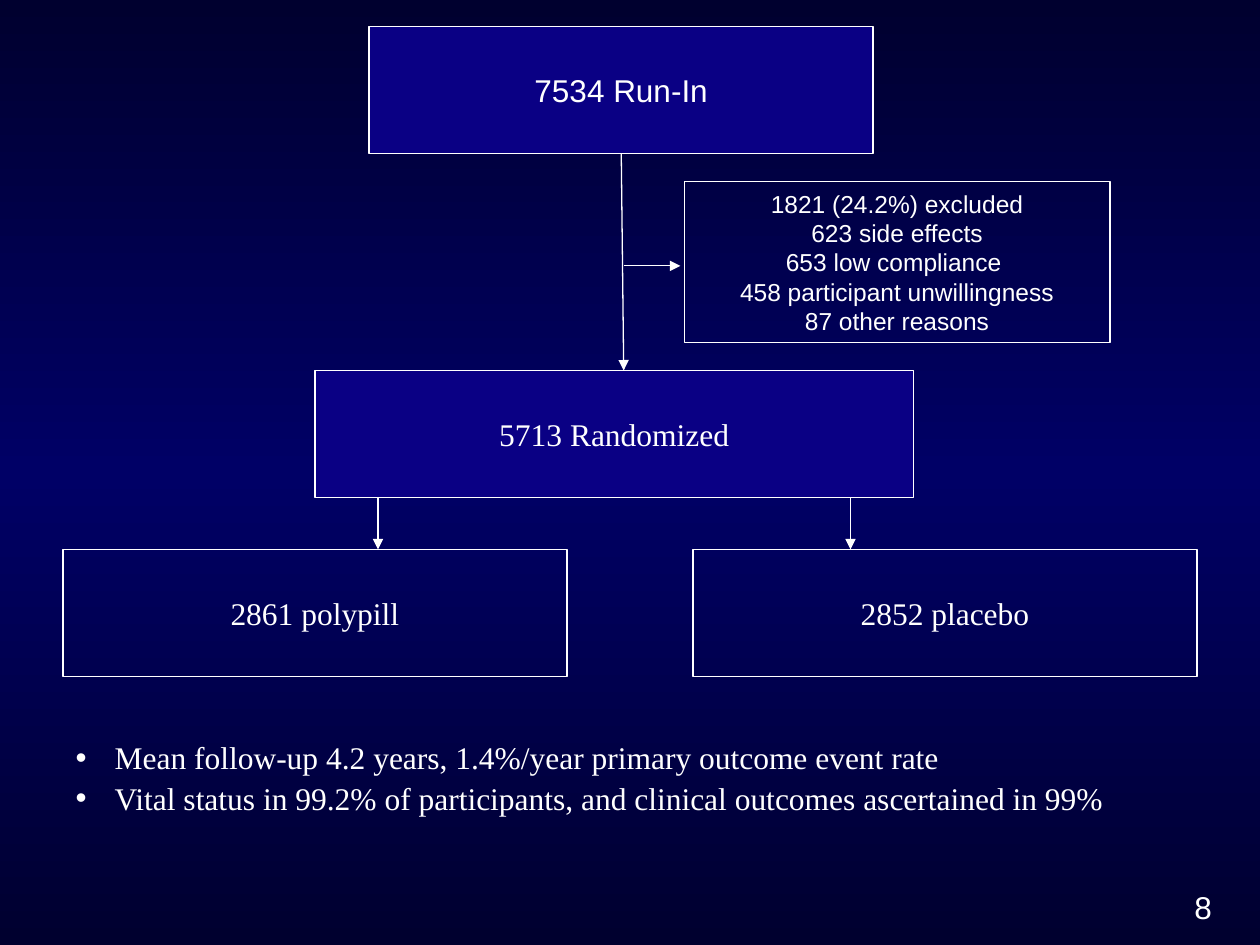
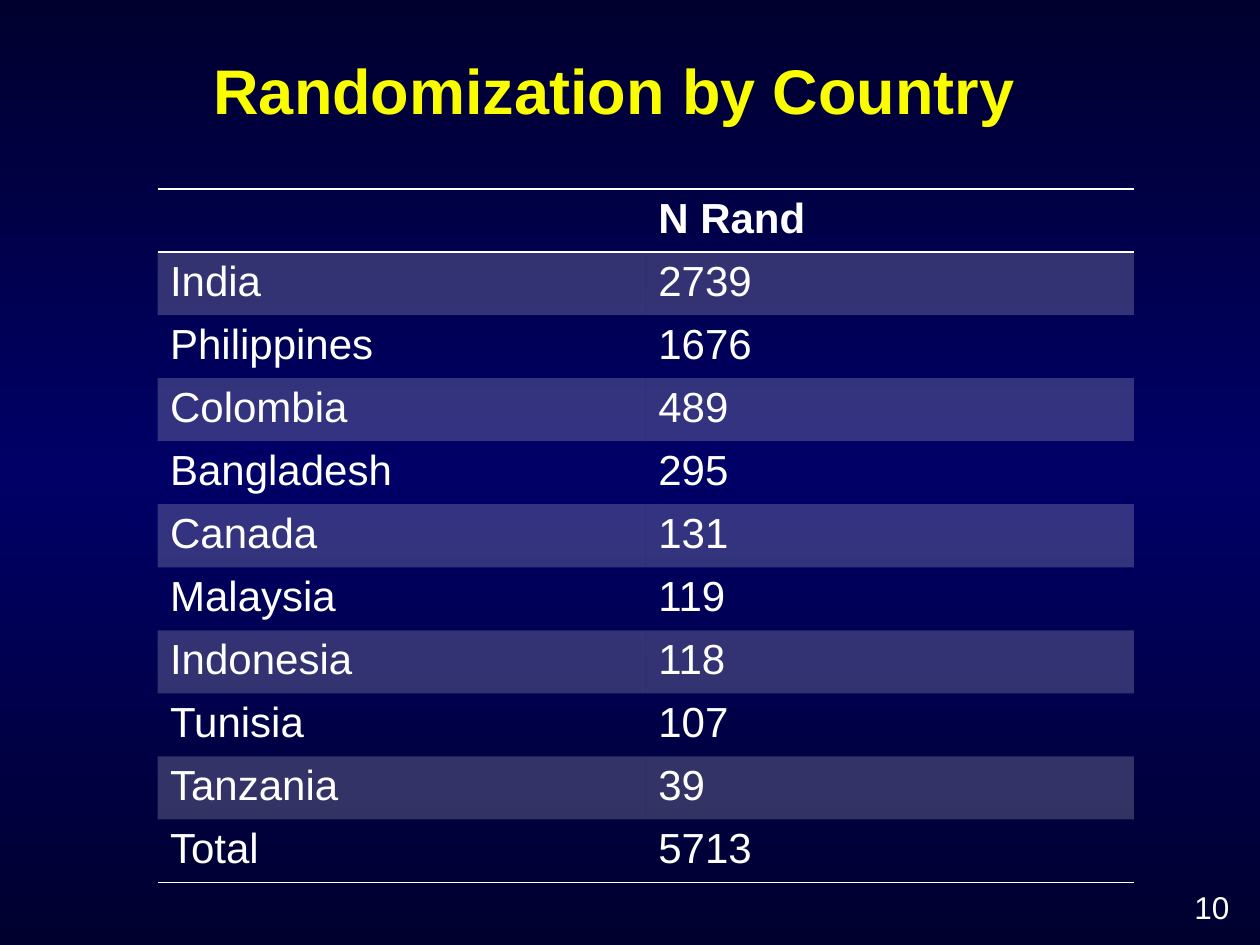
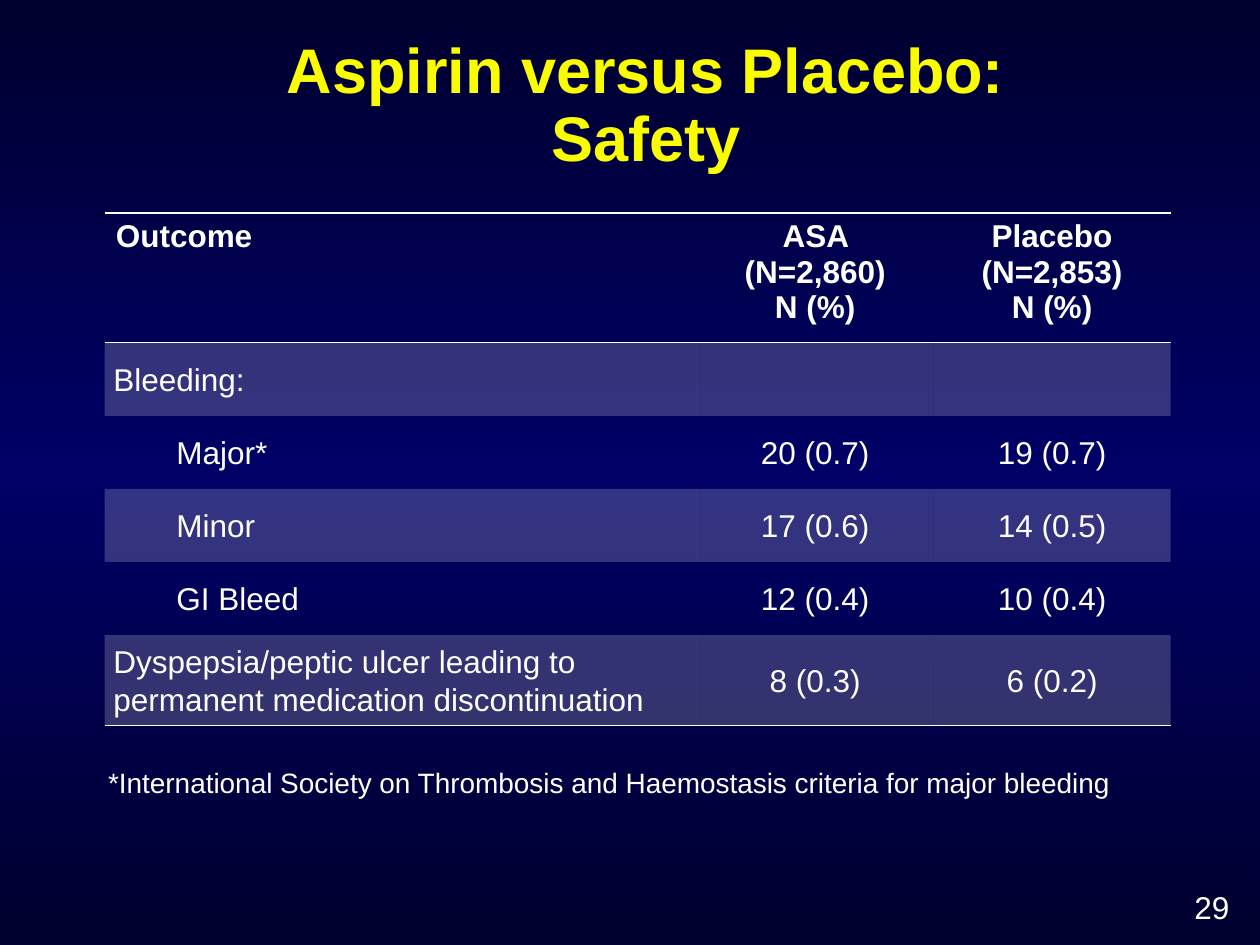
from copy import deepcopy

from lxml.etree import SubElement
from pptx import Presentation
from pptx.dml.color import RGBColor
from pptx.enum.shapes import MSO_CONNECTOR, MSO_SHAPE
from pptx.enum.text import MSO_ANCHOR, MSO_AUTO_SIZE, PP_ALIGN
from pptx.oxml.ns import qn
from pptx.util import Inches, Pt

WHITE, YELLOW, BOX_BLUE = "FFFFFF", "FAFD00", "0A0084"
BACKGROUND = [(0, "00002F"), (0.5, "000066"), (1, "00002F")]
SANS, SERIF = "Arial", "Times New Roman"
NO_STYLE_NO_GRID = "{2D5ABB26-0587-4C30-8999-92F81FD0307C}"
TITLE_AND_CONTENT, TITLE_ONLY = 1, 5
CENTER = PP_ALIGN.CENTER


def rgb(color):
    return RGBColor.from_string(color)


def place(sp, at):
    sp.left, sp.top, sp.width, sp.height = map(Inches, at)


def set_indent(p, left, first=0):
    pPr = p._p.get_or_add_pPr()
    pPr.set("marL", str(Inches(left)))
    pPr.set("indent", str(Inches(first)))
    return pPr


def add_bullet(p):
    pPr = set_indent(p, 0.31, -0.31)
    SubElement(pPr, qn("a:buFont")).set("typeface", SANS)
    SubElement(pPr, qn("a:buChar")).set("char", "•")


def write(tf, lines, size=18, font=SANS, color=WHITE, bold=False,
          align=None, spacing=None, bullets=False):
    """Fill a text frame with one paragraph for each line."""
    for i, line in enumerate(lines):
        p = tf.paragraphs[0] if i == 0 else tf.add_paragraph()
        if bullets:
            add_bullet(p)
        p.space_before = Pt(0)
        p.alignment = align
        p.line_spacing = spacing
        r = p.add_run()
        r.text = line
        r.font.size, r.font.name, r.font.bold = Pt(size), font, bold
        r.font.color.rgb = rgb(color)


def rule_cell(cell, sides):
    """Draw thin white rules on the given sides (T, B) of a cell."""
    tcPr = cell._tc.get_or_add_tcPr()
    for side in sides:
        ln = SubElement(tcPr, qn(f"a:ln{side}"), w=str(Pt(1)))
        SubElement(SubElement(ln, qn("a:solidFill")), qn("a:srgbClr"), val=WHITE)


def shade_cell(cell, shaded):
    if not shaded:
        cell.fill.background()
        return
    cell.fill.solid()
    cell.fill.fore_color.rgb = rgb(WHITE)
    clr = cell._tc.tcPr.find(".//" + qn("a:solidFill") + "[last()]/" + qn("a:srgbClr"))
    fill = cell._tc.tcPr.find(qn("a:solidFill"))
    clr = fill.find(qn("a:srgbClr"))
    SubElement(clr, qn("a:alpha"), val="20000")


class Deck:
    def __init__(self):
        self.prs = Presentation()
        self.prs.slide_width, self.prs.slide_height = Inches(10), Inches(7.5)
        self.s = None
        self.paint_background()

    def paint_background(self):
        fill = self.prs.slide_master.background.fill
        fill.gradient()
        fill.gradient_angle = 270
        first = fill.gradient_stops[0]._gs
        first.addnext(deepcopy(first))
        for stop, (position, color) in zip(fill.gradient_stops, BACKGROUND):
            stop.position = position
            stop.color.rgb = rgb(color)

    def slide(self, number, layout=TITLE_ONLY):
        self.s = self.prs.slides.add_slide(self.prs.slide_layouts[layout])
        self.text([str(number)], (9.38, 7, 0.62, 0.42))

    def title(self, text, at):
        sp = self.s.shapes.title
        place(sp, at)
        tf = sp.text_frame
        tf.auto_size = MSO_AUTO_SIZE.NONE
        tf.vertical_anchor = MSO_ANCHOR.BOTTOM
        write(tf, [text], 36, color=YELLOW, bold=True, align=CENTER, spacing=0.9)

    def remove_title(self):
        title = self.s.shapes.title.element
        title.getparent().remove(title)

    def bullets(self, lines, at):
        sp = self.s.placeholders[1]
        place(sp, at)
        sp.text_frame.auto_size = MSO_AUTO_SIZE.NONE
        write(sp.text_frame, lines, font=SERIF, spacing=1.07, bullets=True)

    def text(self, lines, at, size=18):
        sp = self.s.shapes.add_textbox(*map(Inches, at))
        sp.text_frame.word_wrap = True
        write(sp.text_frame, lines, size)

    def box(self, lines, at, fill=None, size=18, font=SERIF):
        sp = self.s.shapes.add_shape(MSO_SHAPE.RECTANGLE, *map(Inches, at))
        sp.shadow.inherit = False
        if fill:
            sp.fill.solid()
            sp.fill.fore_color.rgb = rgb(fill)
        else:
            sp.fill.background()
        sp.line.color.rgb = rgb(WHITE)
        sp.line.width = Pt(0.75)
        sp.text_frame.vertical_anchor = MSO_ANCHOR.MIDDLE
        write(sp.text_frame, lines, size, font, align=CENTER)

    def arrow(self, *ends):
        c = self.s.shapes.add_connector(MSO_CONNECTOR.STRAIGHT, *map(Inches, ends))
        c.line.color.rgb = rgb(WHITE)
        c.line.width = Pt(0.75)
        spPr = c.element.spPr
        SubElement(spPr.find(qn("a:ln")), qn("a:tailEnd"), type="triangle")
        SubElement(spPr, qn("a:effectLst"))

    def table(self, rows, at, heights, widths=None):
        """Add a table with ruled header and foot, and odd rows shaded."""
        frame = self.s.shapes.add_table(len(rows), len(rows[0]), *map(Inches, at))
        table = frame.table
        table._tbl.tblPr.find(qn("a:tableStyleId")).text = NO_STYLE_NO_GRID
        for column, width in zip(table.columns, widths or []):
            column.width = Inches(width)
        for i, (row, height) in enumerate(zip(table.rows, heights)):
            row.height = Inches(height)
            for cell in row.cells:
                rule_cell(cell, "TB" if i == 0 else "B" if i == len(rows) - 1 else "")
                shade_cell(cell, i % 2 == 1)
        return table


def flow_slide(deck):
    deck.slide(8, TITLE_AND_CONTENT)
    deck.remove_title()
    deck.arrow(4.93, 1.16, 4.95, 2.94)
    deck.arrow(4.95, 2.11, 5.4, 2.11)
    for x in (3, 6.75):
        deck.arrow(x, 3.65, x, 4.36)
    deck.box(["7534 Run-In"], (2.93, 0.21, 4, 1.01), BOX_BLUE, font=SANS)
    deck.box(["1821 (24.2%) excluded", "623 side effects", "653 low compliance ",
              "458 participant unwillingness", "87 other reasons"],
             (5.43, 1.44, 3.38, 1.28), size=14, font=SANS)
    deck.box(["5713 Randomized"], (2.5, 2.94, 4.75, 1.01), BOX_BLUE)
    for x, arm in ((0.5, "2861 polypill"), (5.5, "2852 placebo")):
        deck.box([arm], (x, 4.36, 4, 1.01))
    deck.bullets(["Mean follow-up 4.2 years, 1.4%/year primary outcome event rate",
                  "Vital status in 99.2% of participants, and clinical outcomes "
                  "ascertained in 99%"], (0.5, 5.79, 8.83, 0.75))


def country_slide(deck):
    deck.slide(10)
    deck.title("Randomization by Country", (0.5, 0.42, 8.75, 0.65))
    rows = [("", "N Rand"), ("India", "2739"), ("Philippines", "1676"),
            ("Colombia", "489"), ("Bangladesh", "295"), ("Canada", "131"),
            ("Malaysia", "119"), ("Indonesia", "118"), ("Tunisia", "107"),
            ("Tanzania", "39"), ("Total", "5713")]
    table = deck.table(rows, (1.25, 1.5, 7.75, 5.17), [0.47] * len(rows))
    for i, row in enumerate(rows):
        for cell, value in zip(table.rows[i].cells, row):
            if value:
                write(cell.text_frame, [value], 24, bold=i == 0)


def safety_slide(deck):
    deck.slide(29)
    deck.title("Aspirin versus Placebo: Safety", (1.5, 0.25, 7.25, 1.19))
    rows = [("Outcome", "ASA (N=2,860)\nN (%)", "Placebo (N=2,853)\nN (%)"),
            ("Bleeding:", "", ""),
            ("Major*", "20 (0.7)", "19 (0.7)"),
            ("Minor", "17 (0.6)", "14 (0.5)"),
            ("GI Bleed", "12 (0.4)", "10 (0.4)"),
            ("Dyspepsia/peptic ulcer leading to permanent medication discontinuation",
             "8 (0.3)", "6 (0.2)")]
    bleeding_types = range(2, 5)
    table = deck.table(rows, (0.83, 1.69, 8.47, 4.08),
                       [1.03] + [0.58] * 4 + [0.72], [4.7, 1.88, 1.88])
    for i, row in enumerate(rows):
        for j, value in enumerate(row):
            cell = table.cell(i, j)
            if i > 0:
                cell.vertical_anchor = MSO_ANCHOR.MIDDLE
                cell.margin_left = cell.margin_right = Inches(0.07)
                cell.margin_top = cell.margin_bottom = 0
            else:
                cell.margin_left = cell.margin_right = Inches(0.09)
            if value:
                write(cell.text_frame, value.split("\n"), bold=i == 0,
                      align=CENTER if j else None, spacing=1.07 if i else None)
        if i in bleeding_types:
            set_indent(table.cell(i, 0).text_frame.paragraphs[0], 0.5)
    deck.text(["*International Society on Thrombosis and Haemostasis criteria "
               "for major bleeding"], (0.76, 6.03, 9.24, 0.37), 16)


def main():
    deck = Deck()
    flow_slide(deck)
    country_slide(deck)
    safety_slide(deck)
    deck.prs.save("out.pptx")


if __name__ == "__main__":
    main()
